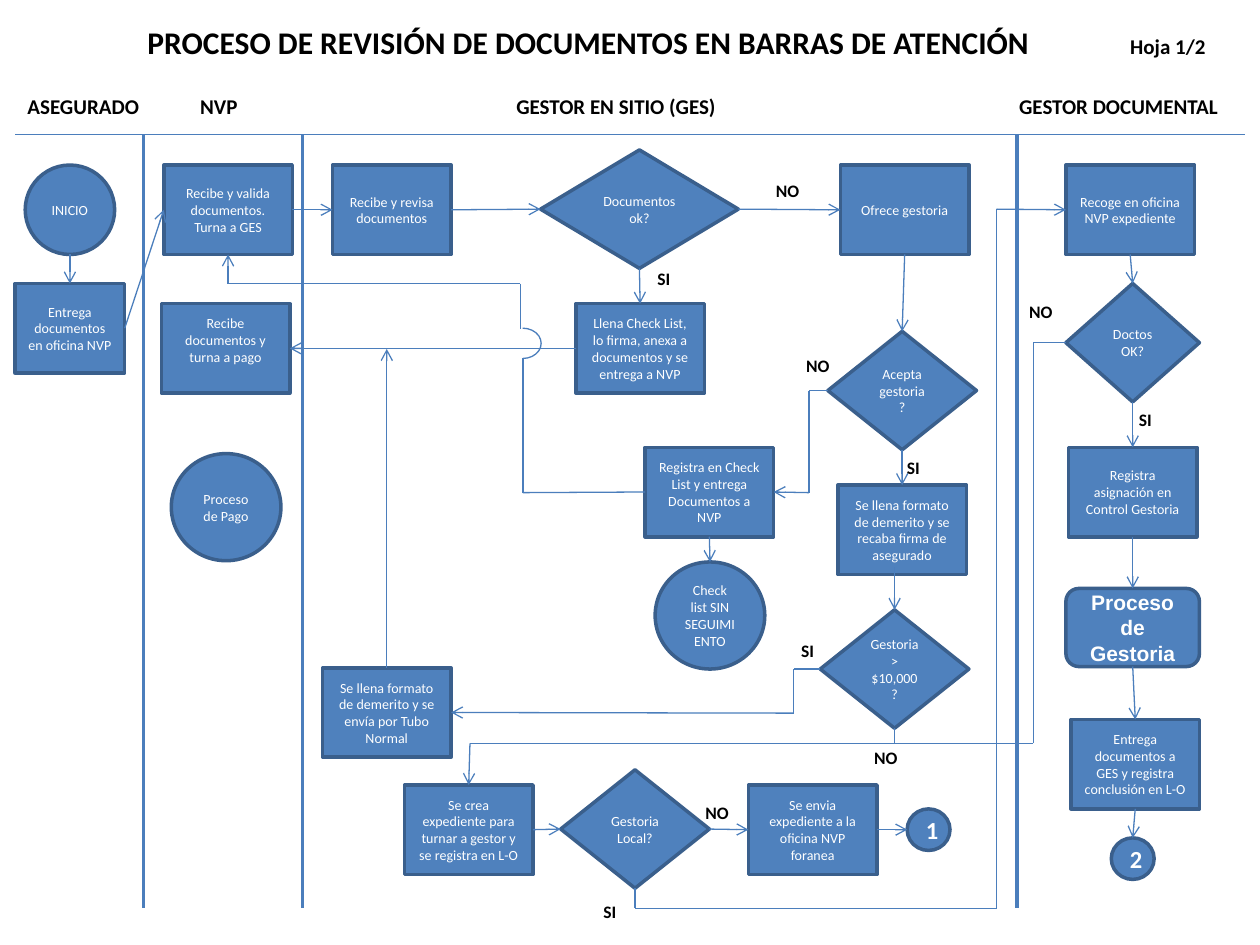
from typing import NamedTuple, Union

from lxml.etree import SubElement
from pptx import Presentation
from pptx.dml.color import RGBColor
from pptx.enum.shapes import MSO_CONNECTOR, MSO_SHAPE
from pptx.enum.text import MSO_ANCHOR, MSO_AUTO_SIZE, PP_ALIGN
from pptx.oxml.ns import qn
from pptx.util import Inches, Pt

COLORS = {"fill": "4F81BD", "border": "3A5F8C", "line": "4B7EBC",
          "text": "FFFFFF", "heading": "000000"}
TOP, LEFT, BOTTOM, RIGHT = range(4)
BOX, DIAMOND = MSO_SHAPE.FLOWCHART_PROCESS, MSO_SHAPE.FLOWCHART_DECISION
CIRCLE, ROUNDED = MSO_SHAPE.OVAL, MSO_SHAPE.FLOWCHART_ALTERNATE_PROCESS


class Node(NamedTuple):
    kind: MSO_SHAPE
    x: float
    y: float
    text: str
    w: float = 1.02
    h: float = 0.71
    size: int = 8
    bold: bool = False
    font: str = "Calibri"
    bottom_inset: float = 0.05


class Site(NamedTuple):
    node: str
    side: int


class Point(NamedTuple):
    x: float
    y: float


class Label(NamedTuple):
    text: str
    x: float
    y: float


End = Union[Site, Point]

NODES = {
    # Asegurado
    "inicio": Node(CIRCLE, 0.2, 1.31, "INICIO", w=0.71),
    "entrega": Node(BOX, 0.12, 2.25, "Entrega documentos en oficina NVP", w=0.87),
    # Aseguradora
    "valida": Node(BOX, 1.3, 1.31, "Recibe y valida documentos. Turna a GES"),
    "turna": Node(BOX, 1.28, 2.41, "Recibe documentos y turna a pago", bottom_inset=0.18),
    "pago": Node(CIRCLE, 1.36, 3.6, "Proceso de Pago", 0.87, 0.85),
    # Gestor en sitio
    "revisa": Node(BOX, 2.64, 1.31, "Recibe y revisa documentos", w=0.94),
    "docs_ok": Node(DIAMOND, 4.29, 1.19, "Documentos ok?", 1.57, 0.94),
    "ofrece": Node(BOX, 6.67, 1.31, "Ofrece gestoria"),
    "acepta": Node(DIAMOND, 6.57, 2.63, "Acepta gestoria?", 1.18, 0.94),
    "registra": Node(BOX, 5.12, 3.55, "Registra en Check List y entrega Documentos a NVP"),
    "llena": Node(BOX, 4.57, 2.41,
                  "Llena Check List, lo firma, anexa a documentos y se entrega a NVP"),
    "sin_seg": Node(CIRCLE, 5.2, 4.46, "Check list SIN SEGUIMIENTO", 0.87, 0.85),
    "demerito": Node(BOX, 6.65, 3.85,
                     "Se llena formato de demerito y se recaba firma de asegurado"),
    "monto": Node(DIAMOND, 6.51, 4.84, "Gestoria > $10,000?", 1.18, 0.94),
    "tubo": Node(BOX, 2.56, 5.3, "Se llena formato de demerito y se envía por Tubo Normal"),
    "crea": Node(BOX, 3.21, 6.23,
                 "Se crea expediente para turnar a gestor y se registra en L-O"),
    "local": Node(DIAMOND, 4.45, 6.11, "Gestoria Local?", 1.18, 0.94),
    "envia": Node(BOX, 5.94, 6.23, "Se envia expediente a la oficina NVP foranea"),
    "ref1": Node(CIRCLE, 7.2, 6.42, "1", 0.34, 0.33, 14, True),
    # Gestor documental
    "recoge": Node(BOX, 8.46, 1.31, "Recoge en oficina NVP expediente"),
    "doctos": Node(DIAMOND, 8.46, 2.25, "Doctos OK?", 1.06, 0.94),
    "control": Node(BOX, 8.48, 3.55, "Registra asignación en Control Gestoria"),
    "gestoria": Node(ROUNDED, 8.46, 4.67, "Proceso de Gestoria", 1.06, 0.62, 12, True, "Arial"),
    "concluye": Node(BOX, 8.5, 5.71, "Entrega documentos a GES y registra conclusión en L-O"),
    "ref2": Node(CIRCLE, 8.82, 6.65, "2", 0.34, 0.33, 14, True),
}

# Direct arrows between two nodes
LINKS = [
    ("inicio", BOTTOM, "entrega", TOP), ("entrega", RIGHT, "valida", LEFT),
    ("valida", RIGHT, "revisa", LEFT), ("revisa", RIGHT, "docs_ok", LEFT),
    ("docs_ok", RIGHT, "ofrece", LEFT), ("docs_ok", BOTTOM, "llena", TOP),
    ("llena", LEFT, "turna", RIGHT), ("ofrece", BOTTOM, "acepta", TOP),
    ("acepta", BOTTOM, "demerito", TOP), ("registra", BOTTOM, "sin_seg", TOP),
    ("crea", RIGHT, "local", LEFT), ("local", RIGHT, "envia", LEFT),
    ("envia", RIGHT, "ref1", LEFT), ("recoge", BOTTOM, "doctos", TOP),
    ("doctos", BOTTOM, "control", TOP), ("control", BOTTOM, "gestoria", TOP),
    ("gestoria", BOTTOM, "concluye", TOP), ("concluye", BOTTOM, "ref2", TOP),
]

# Routes with corners: the ends, and whether the last one has an arrowhead
ROUTES = [
    ([Site("registra", LEFT), Point(4.15, 3.91), Point(4.15, 2.84)], False),
    ([Point(4.13, 2.61), Point(4.13, 2.25), Point(1.81, 2.25), Site("valida", BOTTOM)], True),
    ([Site("acepta", LEFT), Point(6.42, 3.1), Point(6.42, 3.91), Site("registra", RIGHT)], True),
    ([Point(7.1, 4.5), Site("monto", TOP)], True),
    ([Site("monto", LEFT), Point(6.3, 5.31), Point(6.3, 5.66), Site("tubo", RIGHT)], True),
    ([Site("tubo", TOP), Point(3.07, 2.77)], True),
    ([Site("monto", BOTTOM), Point(7.1, 5.9), Point(3.73, 5.9), Site("crea", TOP)], True),
    ([Site("local", BOTTOM), Point(5.04, 7.21), Point(7.91, 7.21), Point(7.91, 1.66),
      Site("recoge", LEFT)], True),
    ([Site("doctos", LEFT), Point(8.2, 2.72), Point(8.2, 5.9), Point(7.1, 5.9)], False),
]

LABELS = [
    Label("NO", 6.06, 1.38), Label("NO", 5.5, 6.32), Label("NO", 6.3, 2.77),
    Label("NO", 6.84, 5.88), Label("NO", 8.07, 2.34), Label("SI", 6.26, 5.03),
    Label("SI", 8.94, 3.2), Label("SI", 5.12, 2.08), Label("SI", 7.1, 3.58),
    Label("SI", 4.69, 7.1),
]


def rgb(name: str) -> RGBColor:
    return RGBColor.from_string(COLORS[name])


def add_run(p, text: str, size: float, color: str, bold=True, font="Calibri") -> None:
    r = p.add_run()
    r.text = text
    r.font.size, r.font.bold, r.font.name = Pt(size), bold, font
    r.font.color.rgb = rgb(color)


def set_heading(sp, runs: list, tabs=()) -> None:
    """Fill a left-aligned text shape with (text, size) runs and tab stops."""
    tf = sp.text_frame
    tf.word_wrap, tf.auto_size = True, MSO_AUTO_SIZE.SHAPE_TO_FIT_TEXT
    tf.vertical_anchor = MSO_ANCHOR.TOP
    p = tf.paragraphs[0]
    p.alignment = PP_ALIGN.LEFT
    if tabs:
        tab_list = SubElement(p._p.get_or_add_pPr(), qn("a:tabLst"))
        for pos in tabs:
            SubElement(tab_list, qn("a:tab"), pos=str(Inches(pos)), algn="l")
    for text, size in runs:
        add_run(p, text, size, "heading")


def add_textbox(s, x: float, y: float, w: float, h: float):
    return s.shapes.add_textbox(Inches(x), Inches(y), Inches(w), Inches(h))


def add_node(s, n: Node):
    sp = s.shapes.add_shape(n.kind, Inches(n.x), Inches(n.y), Inches(n.w), Inches(n.h))
    sp.shadow.inherit = False
    sp.fill.solid()
    sp.fill.fore_color.rgb = rgb("fill")
    sp.line.color.rgb, sp.line.width = rgb("border"), Pt(2)
    tf = sp.text_frame
    tf.word_wrap, tf.vertical_anchor = True, MSO_ANCHOR.MIDDLE
    tf.margin_bottom = Inches(n.bottom_inset)
    p = tf.paragraphs[0]
    p.alignment = PP_ALIGN.CENTER
    add_run(p, n.text, n.size, "text", n.bold, n.font)
    return sp


def locate(end: End) -> Point:
    if isinstance(end, Point):
        return end
    n = NODES[end.node]
    dx, dy = {TOP: (0.5, 0), LEFT: (0, 0.5), BOTTOM: (0.5, 1), RIGHT: (1, 0.5)}[end.side]
    return Point(n.x + n.w * dx, n.y + n.h * dy)


def add_line(s, shapes: dict, start: End, end: End, arrow=False, width=0.75) -> None:
    a, b = locate(start), locate(end)
    cx = s.shapes.add_connector(MSO_CONNECTOR.STRAIGHT, Inches(a.x), Inches(a.y),
                                Inches(b.x), Inches(b.y))
    for site, connect in ((start, cx.begin_connect), (end, cx.end_connect)):
        if isinstance(site, Site) and NODES[site.node].kind != CIRCLE:
            connect(shapes[site.node], site.side)
    cx.line.color.rgb, cx.line.width = rgb("line"), Pt(width)
    if arrow:
        SubElement(cx.line._get_or_add_ln(), qn("a:tailEnd"), type="arrow")
    SubElement(cx._element.spPr, qn("a:effectLst"))


def main() -> None:
    prs = Presentation()
    prs.slide_width, prs.slide_height = Inches(10), Inches(7.5)
    s = prs.slides.add_slide(prs.slide_layouts[5])

    # Title and lane headings
    title = s.shapes.title
    title.left, title.top, title.width, title.height = map(Inches, (0.12, 0.13, 9.61, 0.4))
    set_heading(title, [("\tPROCESO DE REVISIÓN DE DOCUMENTOS EN BARRAS DE ATENCIÓN\t", 18),
                        ("Hoja 1/2", 12)], (0.95, 8.75))
    lanes = "ASEGURADO\tNVP\tGESTOR EN SITIO (GES)\tGESTOR DOCUMENTAL"
    set_heading(add_textbox(s, 0.12, 0.69, 9.76, 0.3), [(lanes, 12)], (1.37, 3.88, 7.87))

    # Lane borders
    add_line(s, {}, Point(0.12, 1.07), Point(9.88, 1.07))
    for x in (1.14, 2.4, 8.07):
        add_line(s, {}, Point(x, 1.07), Point(x, 7.21), width=2)

    # Steps and the lines between them
    shapes = {key: add_node(s, n) for key, n in NODES.items()}
    for a, a_side, b, b_side in LINKS:
        add_line(s, shapes, Site(a, a_side), Site(b, b_side), True)
    for ends, arrow in ROUTES:
        for i, (a, b) in enumerate(zip(ends, ends[1:]), 2):
            add_line(s, shapes, a, b, arrow and i == len(ends))

    # Bridge over the crossing line
    arc = s.shapes.add_shape(MSO_SHAPE.ARC, Inches(4.03), Inches(2.58), Inches(0.24), Inches(0.29))
    arc.rotation, arc.shadow.inherit = 90, False
    arc.adjustments[0], arc.adjustments[1] = 107.35, 0
    arc.fill.background()
    arc.line.color.rgb, arc.line.width = rgb("line"), Pt(0.75)

    # Decision labels
    for lb in LABELS:
        set_heading(add_textbox(s, lb.x, lb.y, 0.47, 0.27), [(lb.text, 10)])

    prs.save("out.pptx")


if __name__ == "__main__":
    main()
